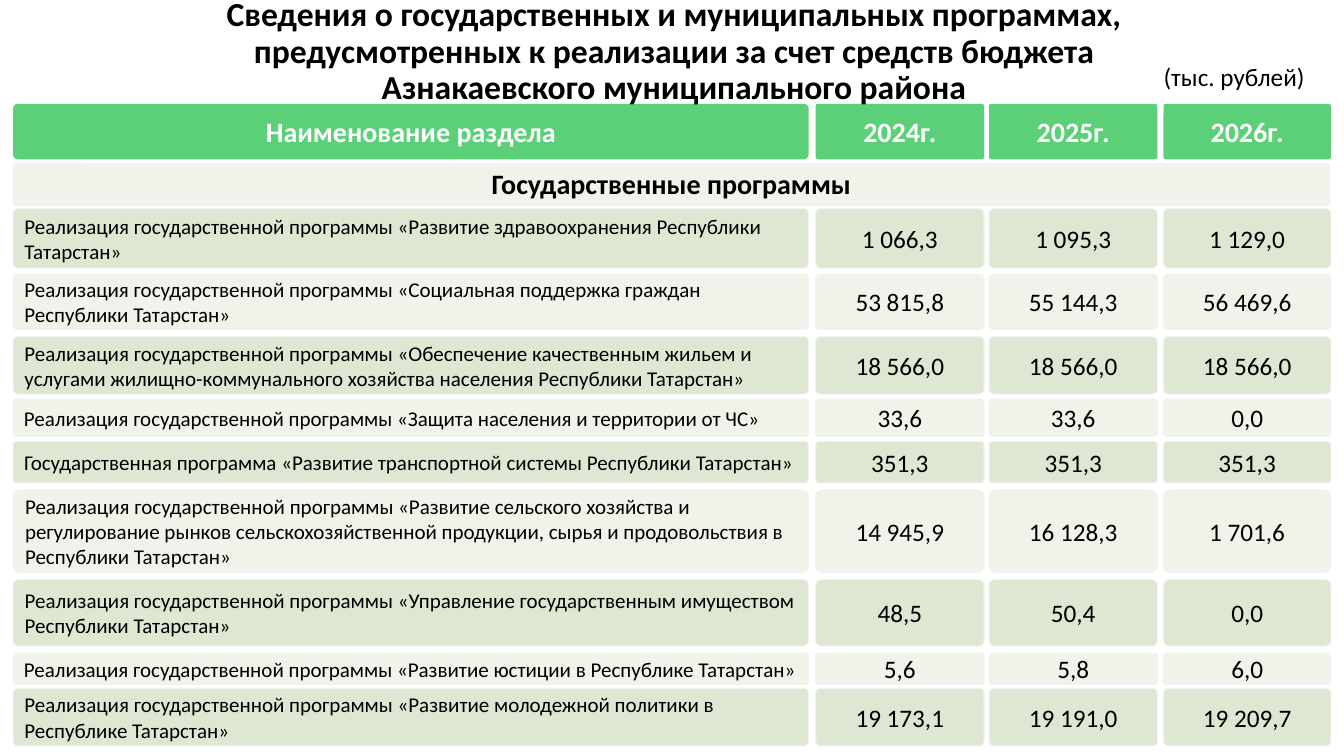
from dataclasses import dataclass

import pptx
import pptx.dml.color
import pptx.enum.shapes
import pptx.enum.text
import pptx.util

ALIGN = pptx.enum.text.PP_ALIGN
ANCHOR = pptx.enum.text.MSO_ANCHOR


@dataclass(frozen=True)
class Theme:
    font: str = "Calibri"
    ink: str = "000000"
    white: str = "FFFFFF"
    header: str = "5BD078"
    dark: str = "DEE7D1"
    light: str = "EFF3EA"
    outline: str = "F2F2F2"
    title_size: int = 24
    heading_size: int = 20
    value_size: int = 18
    name_size: int = 15


@dataclass(frozen=True)
class Span:
    start: float
    length: float


@dataclass(frozen=True)
class TextStyle:
    size: int
    color: str
    bold: bool = False
    align: ALIGN = ALIGN.CENTER


@dataclass(frozen=True)
class CellStyle:
    text: TextStyle
    fill: str
    outline: str | None = None
    radius: float = 0.083
    anchor: ANCHOR = ANCHOR.MIDDLE


@dataclass(frozen=True)
class Program:
    row: Span
    name: str
    values: tuple[str, str, str]


THEME = Theme()
NAME_COLUMN = Span(0.13, 7.89)
YEAR_COLUMNS = (Span(8.09, 1.67), Span(9.81, 1.67), Span(11.54, 1.66))
FULL_WIDTH = Span(0.13, 13.06)
HEADER_ROW = Span(1.03, 0.55)
SECTION_ROW = Span(1.62, 0.42)
YEARS = ("2024г.", "2025г.", "2026г.")

HEADING = TextStyle(THEME.heading_size, THEME.white, bold=True)
SECTION = TextStyle(THEME.heading_size, THEME.ink, bold=True)
TITLE = TextStyle(THEME.title_size, THEME.ink, bold=True)
VALUE = TextStyle(THEME.value_size, THEME.ink)
NAME = TextStyle(THEME.name_size, THEME.ink, align=ALIGN.LEFT)

PROGRAMS = (
    Program(Span(2.07, 0.59),
            "Реализация государственной программы «Развитие здравоохранения Республики Татарстан»",
            ("1 066,3", "1 095,3", "1 129,0")),
    Program(Span(2.72, 0.55),
            "Реализация государственной программы «Социальная поддержка граждан Республики Татарстан»",
            ("53 815,8", "55 144,3", "56 469,6")),
    Program(Span(3.34, 0.57),
            "Реализация государственной программы «Обеспечение качественным жильем и услугами "
            "жилищно-коммунального хозяйства населения Республики Татарстан»",
            ("18 566,0", "18 566,0", "18 566,0")),
    Program(Span(3.96, 0.37),
            "Реализация государственной программы «Защита населения и территории от ЧС»",
            ("33,6", "33,6", "0,0")),
    Program(Span(4.38, 0.41),
            "Государственная программа «Развитие транспортной системы Республики Татарстан»",
            ("351,3", "351,3", "351,3")),
    Program(Span(4.86, 0.82),
            "Реализация государственной программы «Развитие сельского хозяйства и регулирование рынков "
            "сельскохозяйственной продукции, сырья и продовольствия в Республики Татарстан»",
            ("14 945,9", "16 128,3", "1 701,6")),
    Program(Span(5.75, 0.66),
            "Реализация государственной программы «Управление государственным имуществом Республики Татарстан»",
            ("48,5", "50,4", "0,0")),
    Program(Span(6.48, 0.31),
            "Реализация государственной программы «Развитие юстиции в Республике Татарстан»",
            ("5,6", "5,8", "6,0")),
    Program(Span(6.83, 0.57),
            "Реализация государственной программы «Развитие молодежной политики в Республике Татарстан»",
            ("19 173,1", "19 191,0", "19 209,7")),
)


def rgb(value: str) -> pptx.dml.color.RGBColor:
    return pptx.dml.color.RGBColor.from_string(value)


def box(column: Span, row: Span) -> tuple[pptx.util.Length, ...]:
    return tuple(pptx.util.Inches(v) for v in (column.start, row.start, column.length, row.length))


def write(tf, text: str, style: TextStyle) -> None:
    tf.text = text
    p = tf.paragraphs[0]
    p.alignment = style.align
    font = p.runs[0].font
    font.name = THEME.font
    font.size = pptx.util.Pt(style.size)
    font.bold = style.bold
    font.color.rgb = rgb(style.color)


def add_cell(s, column: Span, row: Span, text: str, style: CellStyle) -> None:
    sp = s.shapes.add_shape(pptx.enum.shapes.MSO_SHAPE.ROUNDED_RECTANGLE, *box(column, row))
    sp.adjustments[0] = style.radius
    sp.shadow.inherit = False
    sp.fill.solid()
    sp.fill.fore_color.rgb = rgb(style.fill)
    if style.outline:
        sp.line.color.rgb = rgb(style.outline)
        sp.line.width = pptx.util.Pt(0.75)
    else:
        sp.line.fill.background()
    tf = sp.text_frame
    tf.word_wrap = True
    tf.vertical_anchor = style.anchor
    write(tf, text, style.text)


def add_label(s, column: Span, row: Span, text: str, style: TextStyle, wrap: bool, spacing: float) -> None:
    tf = s.shapes.add_textbox(*box(column, row)).text_frame
    tf.word_wrap = wrap
    tf.auto_size = pptx.enum.text.MSO_AUTO_SIZE.SHAPE_TO_FIT_TEXT
    write(tf, text, style)
    tf.paragraphs[0].line_spacing = spacing


def add_header(s) -> None:
    add_cell(s, NAME_COLUMN, HEADER_ROW, "Наименование раздела", CellStyle(HEADING, THEME.header))
    for column, year in zip(YEAR_COLUMNS, YEARS):
        add_cell(s, column, HEADER_ROW, year, CellStyle(HEADING, THEME.header, radius=0.04))
    add_cell(s, FULL_WIDTH, SECTION_ROW, "Государственные программы",
             CellStyle(SECTION, THEME.light, THEME.outline, anchor=ANCHOR.BOTTOM))


def add_program(s, program: Program, fill: str) -> None:
    add_cell(s, NAME_COLUMN, program.row, program.name, CellStyle(NAME, fill, THEME.outline))
    for column, value in zip(YEAR_COLUMNS, program.values):
        add_cell(s, column, program.row, value, CellStyle(VALUE, fill, THEME.outline))


def main() -> None:
    prs = pptx.Presentation()
    prs.slide_width = pptx.util.Inches(13.33)
    prs.slide_height = pptx.util.Inches(7.5)
    s = prs.slides.add_slide(prs.slide_layouts[6])
    add_header(s)
    for i, program in enumerate(PROGRAMS):
        add_program(s, program, THEME.light if i % 2 else THEME.dark)
    add_label(s, Span(11.43, 1.62), Span(0.56, 0.4), "(тыс. рублей)", VALUE, wrap=False, spacing=1.0)
    add_label(s, Span(1.51, 10.35), Span(-0.07, 1.19),
              "Сведения о государственных и муниципальных программах, предусмотренных к реализации "
              "за счет средств бюджета Азнакаевского муниципального района",
              TITLE, wrap=True, spacing=0.9)
    prs.save("out.pptx")


if __name__ == "__main__":
    main()
